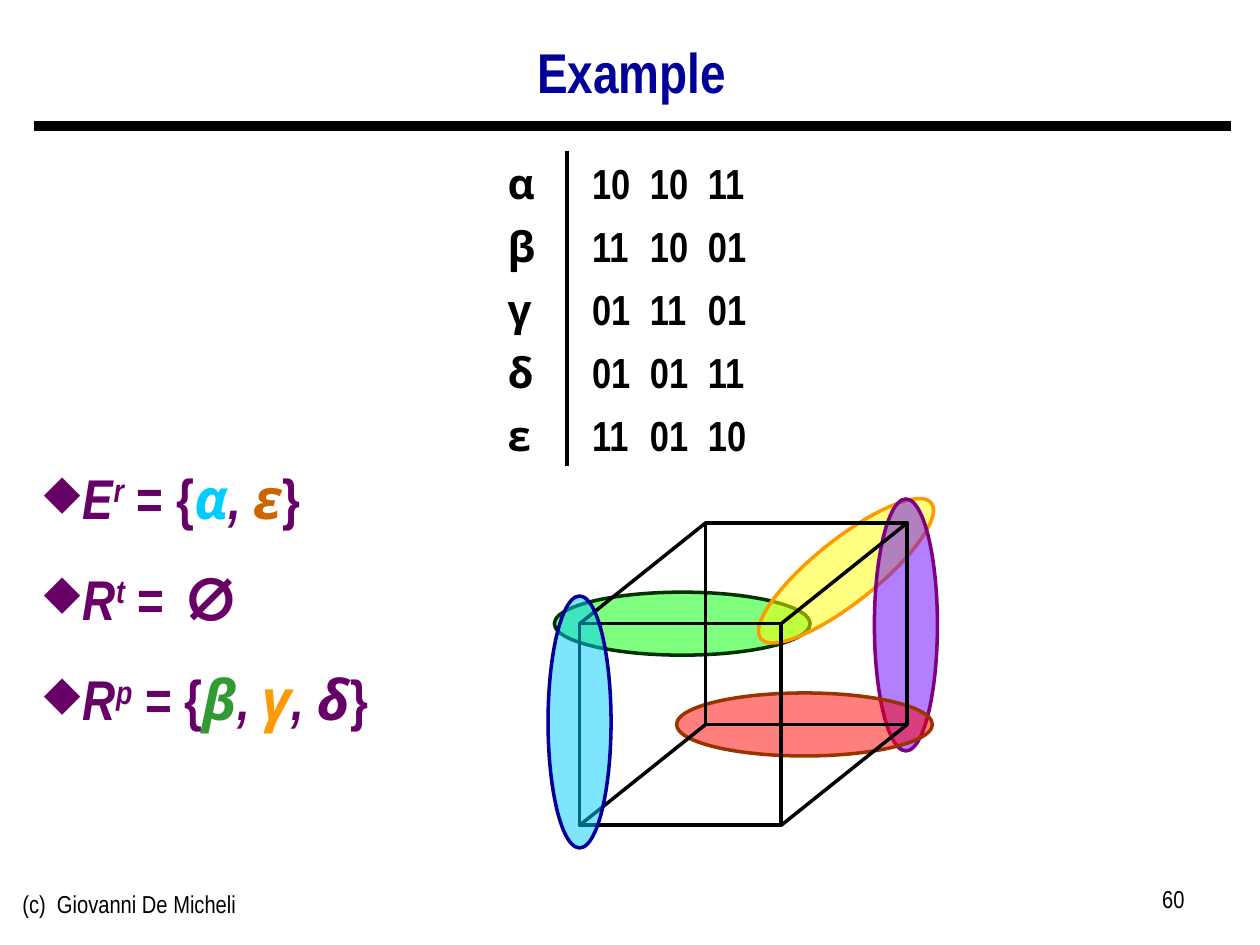
from dataclasses import dataclass
from lxml.etree import SubElement as Sub
from pptx import Presentation
from pptx.dml.color import RGBColor as RGB
from pptx.enum.shapes import MSO_CONNECTOR as Conn, MSO_SHAPE as Shape
from pptx.enum.text import MSO_ANCHOR as Anchor, PP_ALIGN as Align
from pptx.oxml.ns import qn
from pptx.util import Inches, Pt


@dataclass(frozen=True)
class Theme:
    main: str = "Arial Narrow"
    greek: str = "Open Sans"
    math: str = "Noto Sans Mono"
    black: str = "000000"
    navy: str = "000099"
    plum: str = "660066"
    cyan: str = "00CCFF"
    rust: str = "CC6600"
    green: str = "339933"
    orange: str = "FF9900"
    big: int = 32
    code: int = 24
    small: int = 14


T = Theme()

CODES = [
    ("α", "10", "10", "11"),
    ("β", "11", "10", "01"),
    ("γ", "01", "11", "01"),
    ("δ", "01", "01", "11"),
    ("ε", "11", "01", "10"),
]

SETS = [
    ("E", "r", [("α", T.cyan), ("ε", T.rust)]),
    ("R", "t", []),
    ("R", "p", [("β", T.green), ("γ", T.orange), ("δ", T.plum)]),
]

OVALS = [
    (4.4, 4.7, 2.03, 0, "00FF00", "003300"),
    (5.85, 4.28, 1.73, 321.5, "FFFF00", "FF9900"),
    (6.19, 4.71, 2, 270, "6600FF", "800080"),
    (5.37, 5.5, 2.03, 0, "FF0000", "993300"),
]


def style(para, size, color, bold=False):
    font = para.font
    font.name, font.size, font.bold = T.main, Pt(size), bold
    font.color.rgb = RGB.from_string(color)


def add_box(slide, x, y, w, h):
    frame = slide.shapes.add_textbox(*map(Inches, (x, y, w, h))).text_frame
    frame.word_wrap = True
    return frame


def add_note(slide, x, y, w, text, align=Align.LEFT):
    para = add_box(slide, x, y, w, 0.52).paragraphs[0]
    para.text, para.alignment = text, align
    style(para, T.small, T.black)


def add_run(para, text, face=None, color=None, slant=None, raised=False):
    run = para.add_run()
    run.text = text
    run.font.italic = slant
    if face:
        run.font.name = face
    if color:
        run.font.color.rgb = RGB.from_string(color)
    if raised:
        run._r.get_or_add_rPr().set("baseline", "30000")


def add_line(slide, x1, y1, x2, y2, width=2):
    line = slide.shapes.add_connector(
        Conn.STRAIGHT, *map(Inches, (x1, y1, x2, y2)))
    line.line.color.rgb = RGB.from_string(T.black)
    line.line.width = Pt(width)
    Sub(line._element.spPr, qn("a:effectLst"))


def add_form(slide, kind, x, y, w, h, edge):
    form = slide.shapes.add_shape(kind, *map(Inches, (x, y, w, h)))
    form.shadow.inherit = False
    form.fill.background()
    form.line.color.rgb = RGB.from_string(edge)
    form.line.width = Pt(2)
    return form


def add_oval(slide, x, y, w, turn, color, edge):
    oval = add_form(slide, Shape.OVAL, x, y, w, 0.5, edge)
    oval.rotation = turn
    oval.fill.solid()
    oval.fill.fore_color.rgb = RGB.from_string(color)
    tint = oval._element.spPr.find(qn("a:solidFill"))[0]
    Sub(tint, qn("a:alpha"), val="50000")


def add_cube(slide, x, y, side, dx, dy):
    for left, top in ((x, y), (x + dx, y - dy)):
        add_form(slide, Shape.RECTANGLE, left, top, side, side, T.black)
    for left in (x, x + side):
        for top in (y, y + side):
            add_line(slide, left, top, left + dx, top - dy)


def add_title(slide, text):
    title = slide.shapes.title
    title.left, title.top, title.width, title.height = map(
        Inches, (0.26, 0.22, 9.51, 0.75))
    title.text_frame.vertical_anchor = Anchor.MIDDLE
    para = title.text_frame.paragraphs[0]
    para.text, para.alignment, para.line_spacing = text, Align.CENTER, 0.9
    style(para, T.big, T.navy, True)


def add_code(slide, y, letter, *codes):
    para = add_box(slide, 3.93, y, 2.12, 0.5).paragraphs[0]
    tabs = Sub(para._p.get_or_add_pPr(), qn("a:tabLst"))
    for i in range(len(codes)):
        Sub(tabs, qn("a:tab"), pos=str(Inches(0.67 + 0.46 * i)), algn="l")
    style(para, T.code, T.black, True)
    add_run(para, letter, T.greek)
    add_run(para, "\t" + "\t".join(codes))


def add_bullet(para):
    props = para._p.get_or_add_pPr()
    props.set("marL", str(Inches(0.31)))
    props.set("indent", str(-Inches(0.31)))
    Sub(Sub(props, qn("a:buClr")), qn("a:srgbClr"), val=T.plum)
    Sub(props, qn("a:buSzPct"), val="85000")
    Sub(props, qn("a:buChar"), char="◆")


def add_sets(slide):
    frame = add_box(slide, 0.25, 1.18, 9.51, 5.69)
    frame.margin_top = Inches(2.23)
    for i, (name, mark, items) in enumerate(SETS):
        para = frame.add_paragraph() if i else frame.paragraphs[0]
        para.line_spacing = Pt(57.6)
        add_bullet(para)
        style(para, T.big, T.plum, True)
        add_run(para, name, slant=True)
        add_run(para, mark, slant=True, raised=True)
        add_run(para, " = {" if items else " = ")
        for j, (letter, color) in enumerate(items):
            if j:
                add_run(para, ", ", slant=True)
            add_run(para, letter, T.greek, color, True)
        if items:
            add_run(para, "}")
        else:
            add_run(para, "∅", T.math)


def main():
    deck = Presentation()
    deck.slide_width, deck.slide_height = Inches(10), Inches(7.5)
    slide = deck.slides.add_slide(deck.slide_layouts[5])
    add_line(slide, 0.27, 1, 9.77, 1, 6)
    add_note(slide, 0.08, 7.01, 3.17, "(c)  Giovanni De Micheli")
    add_note(slide, 7.17, 6.97, 2.33, "60", Align.RIGHT)
    add_title(slide, "Example")
    add_sets(slide)
    for i, row in enumerate(CODES):
        add_code(slide, 1.2 + 0.5 * i, *row)
    add_line(slide, 4.5, 1.2, 4.5, 3.7)
    for oval in OVALS:
        add_oval(slide, *oval)
    add_cube(slide, 4.6, 4.95, 1.6, 1, 0.8)
    add_oval(slide, 3.6, 5.48, 2, 270, T.cyan, T.navy)
    deck.save("out.pptx")


if __name__ == "__main__":
    main()
